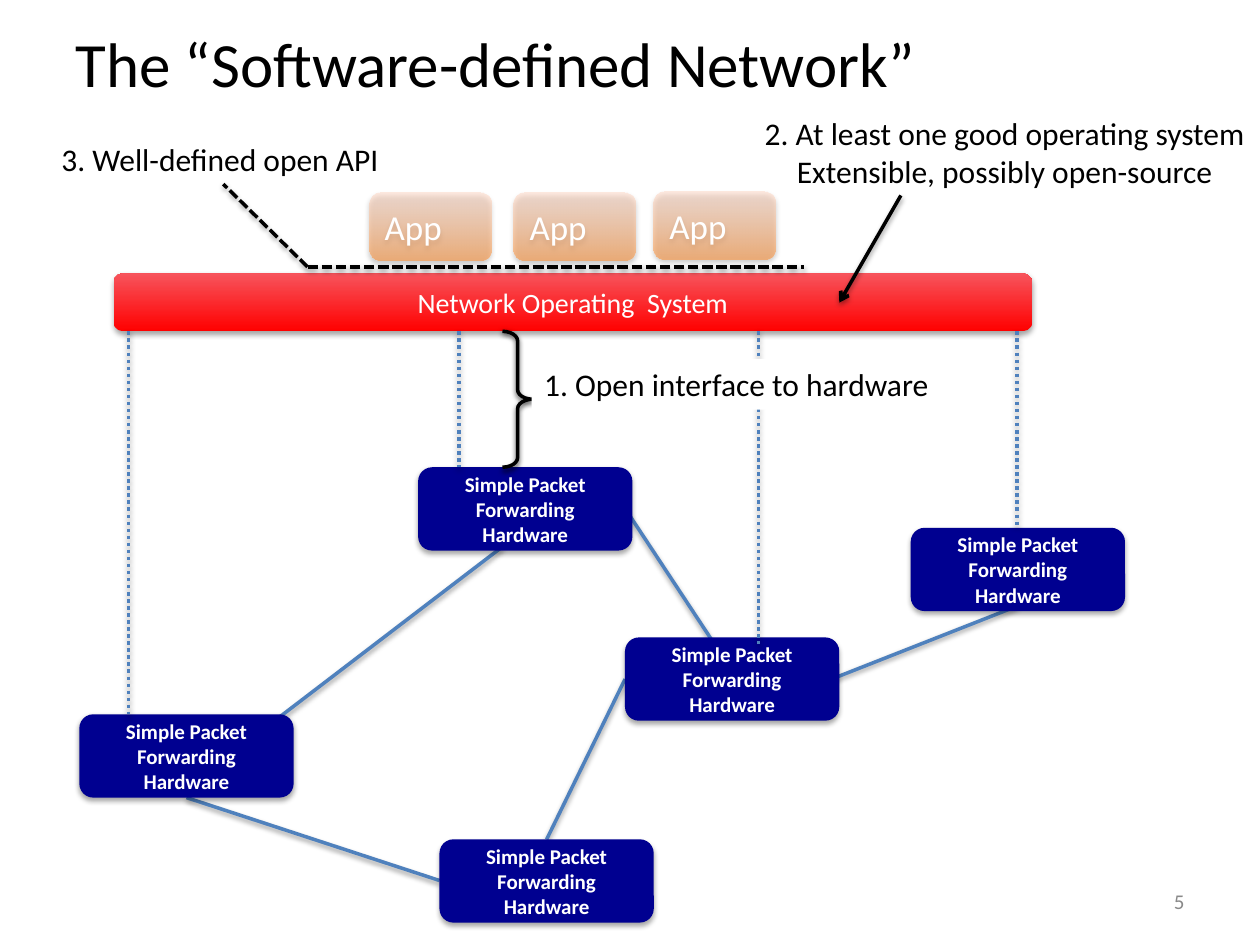
"""Build the software-defined network diagram slide."""
from lxml import etree
from pptx import Presentation
from pptx import util as u
from pptx.dml.color import RGBColor
from pptx.enum import dml, shapes, text
from pptx.oxml.ns import qn

BLACK = RGBColor(0x00, 0x00, 0x00)
WHITE = RGBColor(0xFF, 0xFF, 0xFF)
GREY = RGBColor(0x89, 0x89, 0x89)
BLUE = RGBColor(0x4F, 0x81, 0xBD)
NAVY = RGBColor(0x00, 0x00, 0x90)
RED = RGBColor(0xFF, 0x00, 0x00)
LIGHT_RED = RGBColor(0xF7, 0x54, 0x5C)
ORANGE = RGBColor(0xFF, 0x95, 0x3E)
PEACH = RGBColor(0xFF, 0xD2, 0xBD)
FONT = "Calibri"


def add_shadow(shape, opacity, distance):
    effects = etree.SubElement(shape._element.spPr, qn("a:effectLst"))
    shadow = etree.SubElement(effects, qn("a:outerShdw"), blurRad=str(u.Pt(3.1)),
                              dist=str(u.Pt(distance)), dir="5400000", rotWithShape="0")
    color = etree.SubElement(shadow, qn("a:srgbClr"), val="000000")
    etree.SubElement(color, qn("a:alpha"), val=str(opacity * 1000))


def add_line(start, end, color, dash=None, arrow=False):
    points = [u.Cm(value) for value in (*start, *end)]
    connector = slide.shapes.add_connector(shapes.MSO_CONNECTOR.STRAIGHT, *points)
    connector.line.color.rgb = color
    connector.line.width = u.Pt(2)
    if dash:
        connector.line.dash_style = dash
    if arrow:
        etree.SubElement(connector.line._get_or_add_ln(), qn("a:tailEnd"), type="arrow")
    add_shadow(connector, 38, 1.6)


presentation = Presentation()
presentation.slide_width = u.Cm(25.4)
presentation.slide_height = u.Cm(19.05)
slide = presentation.slides.add_slide(presentation.slide_layouts[5])

title = slide.shapes.title
title.left, title.top, title.width, title.height = u.Cm(1.27), u.Cm(0.5), u.Cm(22.86), u.Cm(2.54)
title.text_frame.text = "The “Software-defined Network”"
title.text_frame.vertical_anchor = text.MSO_ANCHOR.TOP
title.text_frame.margin_top = 0
paragraph = title.text_frame.paragraphs[0]
paragraph.alignment = text.PP_ALIGN.LEFT
paragraph.font.name, paragraph.font.size = FONT, u.Pt(36)
paragraph.font.color.rgb = BLACK

links = [
    ((5.51, 14.55), (10.13, 11.02)),
    ((12.27, 9.75), (14.4, 12.98)),
    ((11.02, 16.92), (12.6, 13.69)),
    ((3.76, 16.08), (8.86, 17.75)),
    ((16.51, 13.79), (20.5, 12.22)),
]
for start, end in links:
    add_line(start, end, BLUE)

app_style = ("App", 20, False, text.PP_ALIGN.LEFT, (ORANGE, PEACH), (60, 45))
system_style = ("Network Operating  System", 16, False, text.PP_ALIGN.CENTER,
                (RED, LIGHT_RED), (100, 100))
node_style = ("Simple Packet Forwarding Hardware", 12, True, text.PP_ALIGN.CENTER, (NAVY,), ())
apps = [(7.44, 3.89), (10.36, 3.89), (13.18, 3.86)]
nodes = [(1.6, 14.4), (12.6, 12.85), (8.86, 16.92), (8.43, 9.42), (18.36, 10.64)]
boxes = [((*place, 2.46, 1.37), app_style) for place in apps]
boxes += [((*place, 4.32, 1.68), node_style) for place in nodes]
boxes += [((2.29, 5.51, 18.52, 1.17), system_style)]
for frame, (wording, size, bold, alignment, colors, opacities) in boxes:
    box = slide.shapes.add_shape(shapes.MSO_SHAPE.ROUNDED_RECTANGLE, *map(u.Cm, frame))
    if opacities:
        box.fill.gradient()
        box.fill.gradient_angle = 90
        for stop, color in zip(box.fill.gradient_stops, colors):
            stop.color.rgb = color
        for element, opacity in zip(box._element.spPr.iter(qn("a:srgbClr")), opacities):
            etree.SubElement(element, qn("a:alpha"), val=str(opacity * 1000))
    else:
        box.fill.solid()
        box.fill.fore_color.rgb = colors[0]
    box.line.fill.background()
    add_shadow(box, 35, 1.8)
    box.text_frame.text = wording
    box.text_frame.vertical_anchor = text.MSO_ANCHOR.MIDDLE
    paragraph = box.text_frame.paragraphs[0]
    paragraph.alignment = alignment
    paragraph.font.name, paragraph.font.size = FONT, u.Pt(size)
    paragraph.font.bold = bold
    paragraph.font.color.rgb = WHITE

for x, bottom in [(2.59, 14.4), (9.25, 9.42), (15.29, 12.98), (20.5, 10.64)]:
    add_line((x, 6.68), (x, bottom), BLUE, dml.MSO_LINE.ROUND_DOT)

brace = slide.shapes.add_shape(shapes.MSO_SHAPE.RIGHT_BRACE, u.Cm(10.13), u.Cm(6.68),
                               u.Cm(0.61), u.Cm(2.74))
brace.adjustments[0] = 0.315
brace.fill.background()
brace.line.color.rgb = BLACK
brace.line.width = u.Pt(2)
add_shadow(brace, 69, 1.6)

labels = [
    ((10.72, 7.24, 8.33, 1.02), "1. Open interface to hardware", text.PP_ALIGN.LEFT, 18, BLACK),
    ((0.99, 2.69, 6.96, 1.02), "3. Well-defined open API", text.PP_ALIGN.LEFT, 18, BLACK),
    ((15.11, 2.16, 10.29, 1.8),
     "2. At least one good operating system\nExtensible, possibly open-source",
     text.PP_ALIGN.CENTER, 18, BLACK),
    ((18.21, 17.65, 5.92, 1.02), "5", text.PP_ALIGN.RIGHT, 12, GREY),
]
for frame, wording, alignment, size, color in labels:
    label = slide.shapes.add_textbox(*map(u.Cm, frame))
    if wording.startswith("1."):
        label.fill.solid()
        label.fill.fore_color.rgb = WHITE
    label.text_frame.text = wording
    label.text_frame.word_wrap = color == GREY
    label.text_frame.vertical_anchor = text.MSO_ANCHOR.MIDDLE
    for paragraph in label.text_frame.paragraphs:
        paragraph.alignment = alignment
        paragraph.font.name, paragraph.font.size = FONT, u.Pt(size)
        paragraph.font.color.rgb = color

for end in [(16.21, 5.38), (4.5, 3.71)]:
    add_line((6.2, 5.38), end, BLACK, dml.MSO_LINE.SQUARE_DOT)
add_line((18.16, 3.94), (16.92, 6.1), BLACK, arrow=True)

presentation.save("out.pptx")
